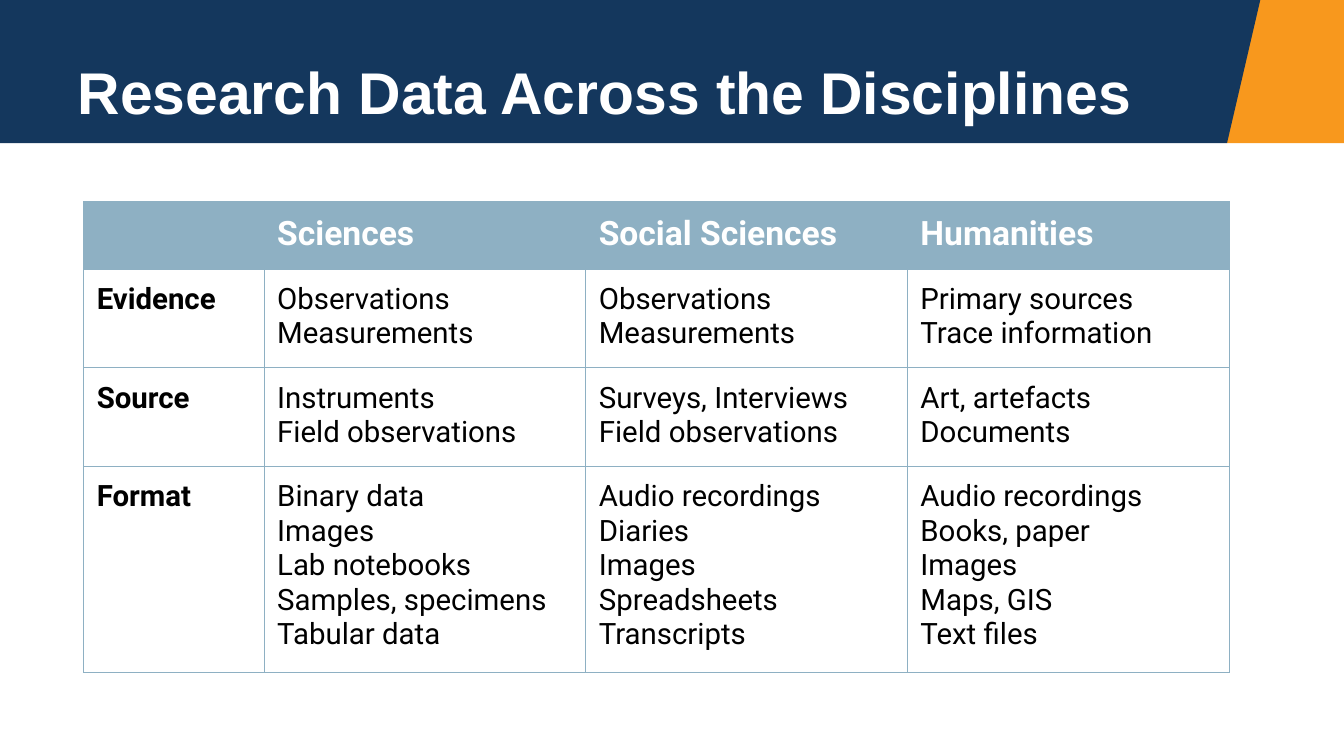
from lxml import etree
from pptx import Presentation
from pptx.dml.color import RGBColor
from pptx.enum import shapes, text
from pptx.oxml import ns
from pptx.util import Inches, Pt

NAVY = RGBColor(0x14, 0x37, 0x5D)
ORANGE = RGBColor(0xF8, 0x98, 0x1D)
STEEL = RGBColor(0x8E, 0xB0, 0xC3)
WHITE = RGBColor(0xFF, 0xFF, 0xFF)
BLACK = RGBColor(0, 0, 0)

SPLIT = 12.17
BAND = 1.42
COLS = [1.79, 3.19, 3.19, 3.19]
ROWS = [0.67, 0.98, 0.98, 2.04]
DATA = [
    ["", "Sciences", "Social Sciences", "Humanities"],
    ["Evidence", "Observations\nMeasurements", "Observations\nMeasurements",
     "Primary sources\nTrace information"],
    ["Source", "Instruments\nField observations",
     "Surveys, Interviews\nField observations", "Art, artefacts\nDocuments"],
    ["Format",
     "Binary data\nImages\nLab notebooks\nSamples, specimens\nTabular data",
     "Audio recordings\nDiaries\nImages\nSpreadsheets\nTranscripts",
     "Audio recordings\nBooks, paper\nImages\nMaps, GIS\nText files"],
]


def set_font(font, name, size, color, bold):
    font.name = name
    font.size = Pt(size)
    font.color.rgb = color
    font.bold = bold


def paint(shape, color):
    shape.shadow.inherit = False
    shape.fill.solid()
    shape.fill.fore_color.rgb = color
    shape.line.fill.background()


def add_block(slide, left, width, color):
    block = slide.shapes.add_shape(
        shapes.MSO_SHAPE.RECTANGLE, Inches(left), 0, Inches(width), Inches(BAND))
    paint(block, color)
    return block


def add_wedge(slide):
    left = Inches(SPLIT)
    form = slide.shapes.build_freeform(left, 0)
    form.add_line_segments([(Inches(SPLIT + 0.33), 0), (left, Inches(BAND))])
    wedge = form.convert_to_shape()
    paint(wedge, NAVY)
    return wedge


def add_title(slide, words):
    title = slide.shapes.title
    title.left, title.top = Inches(0.67), Inches(0.36)
    title.width, title.height = Inches(12.11), Inches(1.17)
    frame = title.text_frame
    frame.text = words
    frame.vertical_anchor = text.MSO_ANCHOR.MIDDLE
    par = frame.paragraphs[0]
    par.alignment = text.PP_ALIGN.LEFT
    par.line_spacing = 0.9
    set_font(par.font, "Arial", 42, WHITE, True)
    return title


def add_edges(cell):
    props = cell._tc.get_or_add_tcPr()
    for spot, side in enumerate(("lnL", "lnR", "lnT", "lnB")):
        edge = etree.Element(ns.qn("a:" + side), w=str(Pt(0.75)))
        fill = etree.SubElement(edge, ns.qn("a:solidFill"))
        etree.SubElement(fill, ns.qn("a:srgbClr"), val=str(STEEL))
        props.insert(spot, edge)


def fill_cell(cell, words, head, bold):
    cell.margin_left = cell.margin_right = Inches(0.13)
    cell.margin_top = cell.margin_bottom = Inches(0.13)
    cell.text = words
    for par in cell.text_frame.paragraphs:
        set_font(par.font, "Roboto", 24 if head else 21,
                 WHITE if head else BLACK, bold)
    if head:
        cell.fill.solid()
        cell.fill.fore_color.rgb = STEEL
    else:
        cell.fill.background()
    add_edges(cell)


def add_grid(slide):
    table = slide.shapes.add_table(
        len(ROWS), len(COLS), Inches(0.83), Inches(2),
        Inches(sum(COLS)), Inches(sum(ROWS))).table
    table.horz_banding = False
    for col, width in zip(table.columns, COLS):
        col.width = Inches(width)
    for row, height in zip(table.rows, ROWS):
        row.height = Inches(height)
    for r, line in enumerate(DATA):
        for c, words in enumerate(line):
            fill_cell(table.cell(r, c), words, r == 0, r == 0 or c == 0)


def main():
    deck = Presentation()
    deck.slide_width, deck.slide_height = Inches(13.33), Inches(7.5)
    slide = deck.slides.add_slide(deck.slide_layouts[5])
    title = add_title(slide, "Research Data Across the Disciplines")
    for part in (add_block(slide, 0, SPLIT, NAVY),
                 add_block(slide, SPLIT, 13.33 - SPLIT, ORANGE),
                 add_wedge(slide)):
        title.element.addprevious(part.element)
    add_grid(slide)
    deck.save("out.pptx")


if __name__ == "__main__":
    main()
